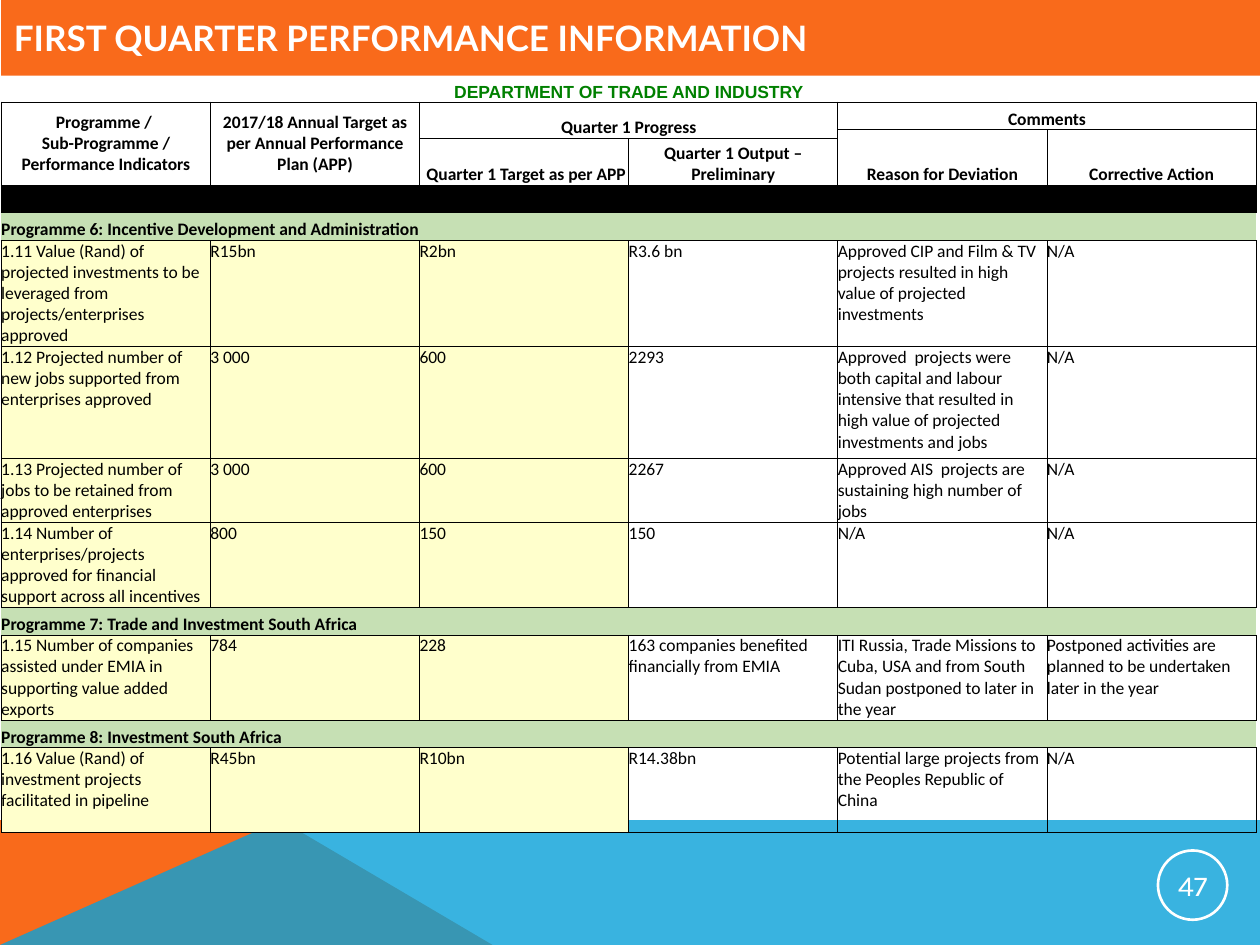
from dataclasses import dataclass

from lxml.etree import SubElement
from pptx import Presentation
from pptx.dml.color import RGBColor
from pptx.enum.shapes import MSO_SHAPE
from pptx.enum.text import MSO_ANCHOR, MSO_AUTO_SIZE, PP_ALIGN
from pptx.oxml.ns import qn
from pptx.util import Inches, Pt


@dataclass(frozen=True)
class Theme:
    orange: str = "F96A1B"
    blue: str = "08A1D9"
    green: str = "008000"
    band: str = "C6E0B4"
    cream: str = "FFFFCC"
    white: str = "FFFFFF"
    black: str = "000000"
    head: float = 20
    body: float = 10
    page: float = 16.5
    rule: float = 0.5


theme = Theme()


def write(frame, text, size=theme.body, font="Calibri", color=theme.black,
          bold=False, align=PP_ALIGN.LEFT):
    para = frame.paragraphs[0]
    para.text = text
    para.alignment = align
    for run in para.runs:
        run.font.size = Pt(size)
        run.font.name = font
        run.font.bold = bold
        run.font.color.rgb = RGBColor.from_string(color)
    # Keeps empty cells from growing to the default type size
    SubElement(para._p, qn("a:endParaRPr"), sz=str(int(size * 100)))


def dress(cell, edges="LRTB", fill=None, anchor=MSO_ANCHOR.TOP):
    """Set the margins, borders, fill and anchor of a table cell."""
    cell.margin_left = cell.margin_right = 0
    cell.margin_top = cell.margin_bottom = 0
    cell.vertical_anchor = anchor
    props = cell._tc.get_or_add_tcPr()
    for side in "LRTB":
        line = SubElement(props, qn(f"a:ln{side}"), w=str(Pt(theme.rule)))
        if side in edges:
            paint = SubElement(line, qn("a:solidFill"))
            SubElement(paint, qn("a:srgbClr"), val=theme.black)
        else:
            SubElement(line, qn("a:noFill"))
    if fill:
        cell.fill.solid()
        cell.fill.fore_color.rgb = RGBColor.from_string(fill)
    else:
        cell.fill.background()


deck = Presentation()
deck.slide_width, deck.slide_height = Inches(10), Inches(7.5)
slide = deck.slides.add_slide(deck.slide_layouts[5])
shapes = slide.shapes

# Footer: an orange wedge under a translucent blue one
wedges = [
    (theme.orange, [(0, 7.5), (0, 6.51), (2.23, 6.51), (3.91, 7.5)]),
    (theme.blue, [(0, 7.5), (2.23, 6.51), (10, 6.51), (10, 7.5)]),
]
for color, points in wedges:
    spots = [(Inches(x), Inches(y)) for x, y in points]
    pen = shapes.build_freeform(*spots[0])
    pen.add_line_segments(spots[1:], close=True)
    wedge = pen.convert_to_shape()
    wedge.shadow.inherit = False
    wedge.line.fill.background()
    wedge.fill.solid()
    wedge.fill.fore_color.rgb = RGBColor.from_string(color)
tint = wedge._element.spPr.find(qn("a:solidFill")).find(qn("a:srgbClr"))
SubElement(tint, qn("a:alpha"), val="80000")

# Title bar
title = shapes.title
title.left, title.top = Inches(0.01), Inches(0)
title.width, title.height = Inches(9.99), Inches(0.6)
title.fill.solid()
title.fill.fore_color.rgb = RGBColor.from_string(theme.orange)
title.text_frame.auto_size = MSO_AUTO_SIZE.NONE
title.text_frame.vertical_anchor = MSO_ANCHOR.MIDDLE
write(title.text_frame, "FIRST QUARTER PERFORMANCE INFORMATION",
      size=theme.head, font="Lato", color=theme.white, bold=True)

# Table
heights = [0.22, 0.22, 0.07, 0.37, 0.22, 0.22, 0.83, 0.89, 0.5, 0.67,
           0.22, 0.67, 0.22, 0.67]
frame = shapes.add_table(len(heights), 6, Inches(0.01), Inches(0.59),
                         Inches(9.96), Inches(sum(heights)))
table = frame.table
table.first_row = table.horz_banding = False
for col in table.columns:
    col.width = Inches(1.66)
for row, height in zip(table.rows, heights):
    row.height = Inches(height)

# Heading cells: row, column, last row, last column, text
heads = [
    (1, 0, 3, 0, "Programme / \vSub-Programme / Performance Indicators"),
    (1, 1, 3, 1, "2017/18 Annual Target as per Annual Performance Plan (APP)"),
    (1, 2, 2, 3, "Quarter 1 Progress"),
    (1, 4, 1, 5, "Comments"),
    (2, 4, 3, 4, "Reason for Deviation"),
    (2, 5, 3, 5, "Corrective Action"),
    (3, 2, 3, 2, " Quarter 1 Target as per APP"),
    (3, 3, 3, 3, "Quarter 1 Output – Preliminary"),
]
words = {(r, c): text for r, c, _, _, text in heads}
for r in range(5):
    for c in range(6):
        cell = table.cell(r, c)
        middle = r == 1 and c < 2
        dress(cell, edges="B" if r == 0 else "LRTB",
              fill={(1, 0): theme.white, (4, c): theme.black}.get((r, c)),
              anchor=MSO_ANCHOR.MIDDLE if middle else MSO_ANCHOR.BOTTOM)
        if (r, c) == (0, 0):
            write(cell.text_frame, "DEPARTMENT OF TRADE AND INDUSTRY",
                  font="Arial", color=theme.green, bold=True,
                  align=PP_ALIGN.CENTER)
        else:
            write(cell.text_frame, words.get((r, c), ""), bold=True,
                  align=PP_ALIGN.CENTER)

# A row with one text is a programme band
rows = [
    ["Programme 6: Incentive Development and Administration"],
    ["1.11 Value (Rand) of projected investments to be leveraged from "
     "projects/enterprises approved", "R15bn", "R2bn", "R3.6 bn",
     "Approved CIP and Film & TV projects resulted in high value of "
     "projected investments", "N/A"],
    ["1.12 Projected number of new jobs supported from enterprises approved",
     "3 000", "600", "2293",
     "Approved  projects were both capital and labour intensive that "
     "resulted in high value of projected investments and jobs", "N/A"],
    ["1.13 Projected number of jobs to be retained from approved enterprises",
     "3 000", "600", "2267",
     "Approved AIS  projects are sustaining high number of jobs", "N/A"],
    ["1.14 Number of enterprises/projects approved for financial support "
     "across all incentives", "800", "150", "150", "N/A", "N/A"],
    ["Programme 7: Trade and Investment South Africa"],
    ["1.15 Number of companies assisted under EMIA in supporting value "
     "added exports", "784", "228",
     "163 companies benefited financially from EMIA",
     "ITI Russia, Trade Missions to Cuba, USA and from South Sudan "
     "postponed to later in the year",
     "Postponed activities are planned to be undertaken later in the year"],
    ["Programme 8: Investment South Africa"],
    ["1.16 Value (Rand) of investment projects facilitated in pipeline",
     "R45bn", "R10bn", "R14.38bn",
     "Potential large projects from the Peoples Republic of China\v", "N/A"],
]
for r, texts in enumerate(rows, 5):
    band = len(texts) == 1
    for c in range(6):
        cell = table.cell(r, c)
        if band:
            dress(cell, edges="TB", fill=theme.band, anchor=MSO_ANCHOR.BOTTOM)
        else:
            dress(cell, fill=theme.cream if c < 3 else None)
        write(cell.text_frame, texts[c] if c < len(texts) else "", bold=band)

spans = [head[:4] for head in heads if head[:2] != head[2:4]]
spans += [(0, 0, 0, 5), (4, 0, 4, 5), (5, 0, 5, 2), (10, 0, 10, 1),
          (12, 0, 12, 1)]
for top, left, bottom, right in spans:
    table.cell(top, left).merge(table.cell(bottom, right))

# Page number
badge = shapes.add_shape(MSO_SHAPE.OVAL, Inches(9.19), Inches(6.75),
                         Inches(0.55), Inches(0.55))
badge.shadow.inherit = False
badge.fill.background()
badge.line.color.rgb = RGBColor.from_string(theme.white)
badge.line.width = Pt(1.5)
text = badge.text_frame
text.margin_left = text.margin_right = Inches(0.01)
text.margin_top = text.margin_bottom = Inches(0.01)
text.vertical_anchor = MSO_ANCHOR.MIDDLE
write(text, "47", size=theme.page, font="Karla", color=theme.white,
      align=PP_ALIGN.CENTER)

deck.save("out.pptx")
